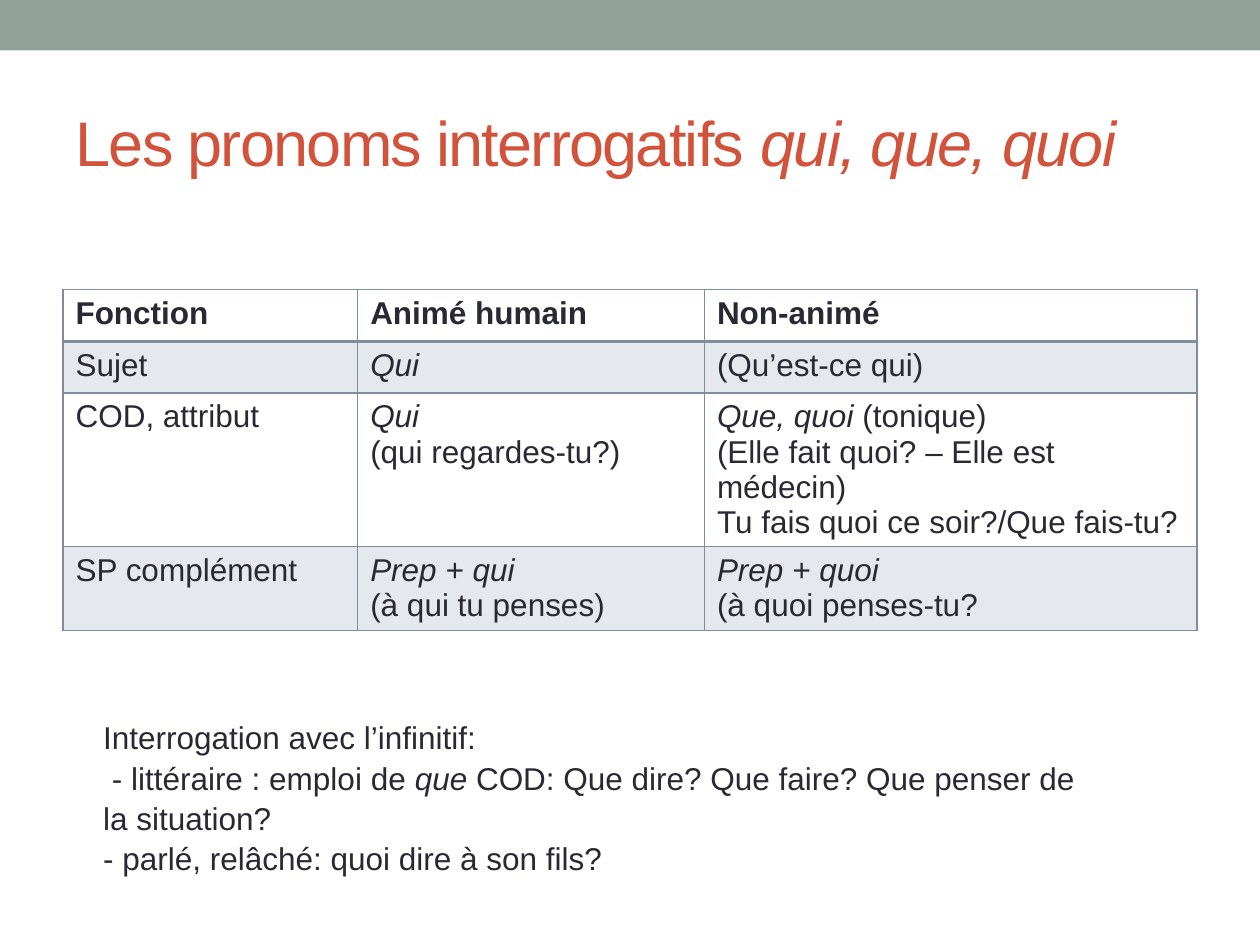
import pptx
import pptx.dml.color
import pptx.enum.shapes
import pptx.enum.text
import pptx.oxml
import pptx.oxml.ns
import pptx.util
from pptx.util import Cm

ACCENT = "808DA0"
INK = "292934"
HEADER = ["Fonction", "Animé humain", "Non-animé"]
ROWS = [
    ["Sujet", "*Qui*", "(Qu’est-ce qui)"],
    ["COD, attribut", "*Qui*\n(qui regardes-tu?)",
     "*Que, quoi* (tonique)\n(Elle fait quoi? – Elle est médecin)\n"
     "Tu fais quoi ce soir?/Que fais-tu?"],
    ["SP complément", "*Prep + qui*\n(à qui tu penses)",
     "*Prep + quoi*\n(à quoi penses-tu?"],
]
NOTES = (
    "Interrogation avec l’infinitif:\n"
    " - littéraire : emploi de *que* COD: Que dire? Que faire? Que penser de la situation?\n"
    "- parlé, relâché: quoi dire à son fils?"
)


def color(value):
    """Turn a hex string into a colour."""
    return pptx.dml.color.RGBColor.from_string(value)


class GrammarSlide:
    """Hold the text style and the current slide."""

    def __init__(self, presentation, font="Arial", size=18):
        """Add a title-only slide to the presentation."""
        self.slide = presentation.slides.add_slide(presentation.slide_layouts[5])
        self.font = font
        self.size = size

    def set_text(self, text_frame, text, ink=INK, size=None, bold=False, spacing=None, tracking=None):
        """Set lines of text, with italics between asterisks."""
        text_frame.text = text.replace("*", "")
        for paragraph, line in zip(text_frame.paragraphs, text.split("\n")):
            paragraph.text = ""
            paragraph.alignment = pptx.enum.text.PP_ALIGN.LEFT
            paragraph.line_spacing = spacing
            for index, part in enumerate(line.split("*")):
                if not part:
                    continue
                run = paragraph.add_run()
                run.text = part
                run.font.name = self.font
                run.font.size = pptx.util.Pt(size or self.size)
                run.font.color.rgb = color(ink)
                run.font.bold = bold
                run.font.italic = index % 2 == 1
                if tracking:
                    run._r.get_or_add_rPr().set("spc", str(tracking * 100))

    def band(self, left, top, width, height, fill):
        """Draw a plain filled rectangle."""
        shape = self.slide.shapes.add_shape(
            pptx.enum.shapes.MSO_SHAPE.RECTANGLE, Cm(left), Cm(top), Cm(width), Cm(height))
        shape.shadow.inherit = False
        shape.fill.solid()
        shape.fill.fore_color.rgb = color(fill)
        shape.line.fill.background()

    def title(self, text, left, top, width, height):
        """Place and format the title placeholder."""
        shape = self.slide.shapes.title
        shape.left, shape.top, shape.width, shape.height = map(Cm, (left, top, width, height))
        shape.text_frame.vertical_anchor = pptx.enum.text.MSO_ANCHOR.MIDDLE
        self.set_text(shape.text_frame, text, ink="D2533C", size=36, tracking=-1)

    def text(self, text, left, top, width, height):
        """Add a wrapping text box."""
        shape = self.slide.shapes.add_textbox(Cm(left), Cm(top), Cm(width), Cm(height))
        shape.text_frame.word_wrap = True
        self.set_text(shape.text_frame, text, spacing=1.07)

    def borders(self, cell, top, bottom):
        """Draw the four borders of a cell, with widths in points."""
        properties = cell._tc.get_or_add_tcPr()
        for side, width in (("L", 1), ("R", 1), ("T", top), ("B", bottom)):
            properties.append(pptx.oxml.parse_xml(
                f'<a:ln{side} {pptx.oxml.ns.nsdecls("a")} w="{pptx.util.Pt(width)}">'
                f'<a:solidFill><a:srgbClr val="{ACCENT}"/></a:solidFill></a:ln{side}>'))

    def tint(self, cell, opacity):
        """Fill a cell with the translucent accent colour."""
        cell.fill.solid()
        cell.fill.fore_color.rgb = color(ACCENT)
        accent = cell._tc.tcPr.find(
            f'{pptx.oxml.ns.qn("a:solidFill")}/{pptx.oxml.ns.qn("a:srgbClr")}')
        accent.append(pptx.oxml.parse_xml(
            f'<a:alpha {pptx.oxml.ns.nsdecls("a")} val="{opacity * 1000}"/>'))

    def table(self, rows, left, top, widths, heights):
        """Add a ruled table with a bold header and every other row tinted."""
        table = self.slide.shapes.add_table(
            len(rows), len(widths), Cm(left), Cm(top), Cm(sum(widths)), Cm(sum(heights))).table
        table.first_row = table.horz_banding = False
        for column, width in zip(table.columns, widths):
            column.width = Cm(width)
        for index, (row, height) in enumerate(zip(rows, heights)):
            table.rows[index].height = Cm(height)
            for cell, text in zip(table.rows[index].cells, row):
                self.set_text(cell.text_frame, text, bold=index == 0)
                self.borders(cell, 2 if index == 1 else 1, 2 if index == 0 else 1)
                if index % 2:
                    self.tint(cell, 20)
                else:
                    cell.fill.background()


def main():
    """Build and save the slide."""
    presentation = pptx.Presentation()
    presentation.slide_width, presentation.slide_height = Cm(25.4), Cm(19.05)
    slide = GrammarSlide(presentation)
    slide.band(0, 0, 25.4, 1.02, "93A299")
    slide.title("Les pronoms interrogatifs *qui, que, quoi*", 1.27, 1.47, 22.86, 2.74)
    slide.table([HEADER] + ROWS, 1.27, 5.84, [5.94, 6.99, 9.93], [1.04, 1.04, 3.08, 1.69])
    slide.text(NOTES, 1.83, 14.3, 20.55, 4.11)
    presentation.save("out.pptx")


if __name__ == "__main__":
    main()
